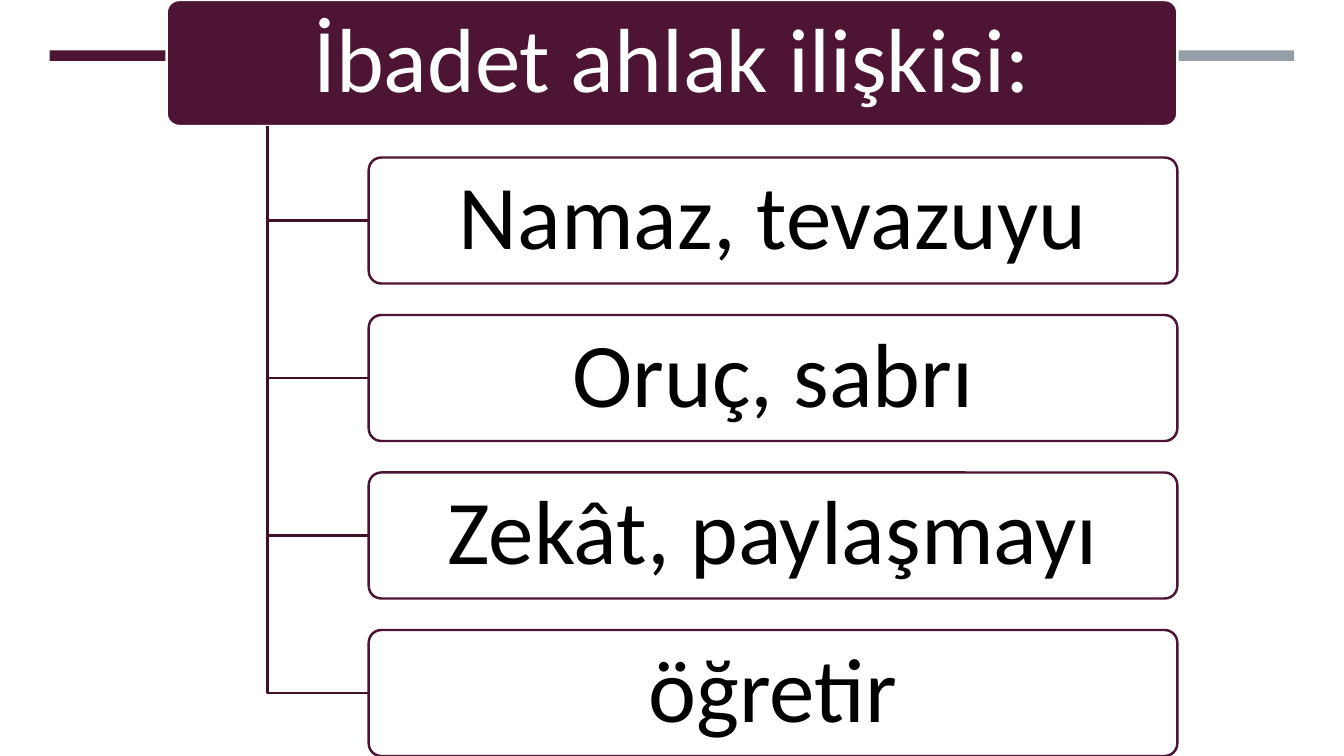
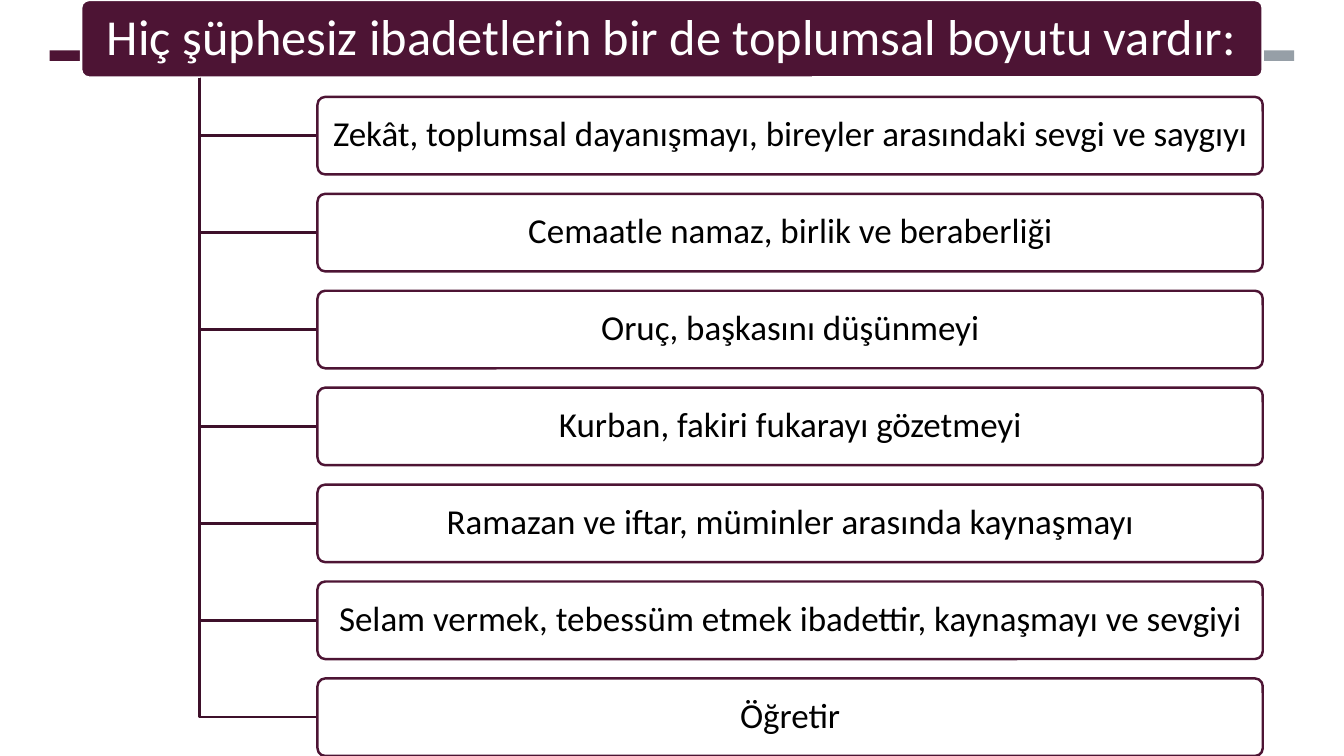
from dataclasses import dataclass
from pptx import Presentation
from pptx.dml.color import RGBColor
from pptx.enum.shapes import MSO_SHAPE
from pptx.enum.text import MSO_ANCHOR, MSO_AUTO_SIZE, PP_ALIGN
from pptx.util import Pt


# Colours, font and sizes
@dataclass(frozen=True)
class Theme:
    plum: RGBColor = RGBColor.from_string("4D1434")
    dark: RGBColor = RGBColor.from_string("3E102A")
    grey: RGBColor = RGBColor.from_string("969FA7")
    white: RGBColor = RGBColor.from_string("FFFFFF")
    black: RGBColor = RGBColor.from_string("000000")
    font: str = "Calibri"
    large: int = 65
    mid: int = 36
    small: int = 25
    line: float = 1.75


WIDE, HIGH = 960, 540
GAP = 0.25     # gap between boxes, as a share of box height
INDENT = 0.1   # trunk indent, as a share of head width


def write(shape, text, size, color, font):
    """Put one centred line of text into a shape."""
    frame = shape.text_frame
    frame.word_wrap = True
    frame.auto_size = MSO_AUTO_SIZE.NONE
    frame.vertical_anchor = MSO_ANCHOR.MIDDLE
    frame.margin_left = frame.margin_right = Pt(5)
    frame.margin_top = frame.margin_bottom = Pt(0)
    par = frame.paragraphs[0]
    par.alignment = PP_ALIGN.CENTER
    par.line_spacing = 0.9
    run = par.add_run()
    run.text = text
    run.font.size = Pt(size)
    run.font.name = font
    run.font.color.rgb = color


class Deck:
    def __init__(self, theme):
        self.theme = theme
        self.file = Presentation()
        self.file.slide_width, self.file.slide_height = Pt(WIDE), Pt(HIGH)
        self.layout = self.file.slide_layouts[5]
        self.slide = None

    def start(self):
        self.slide = self.file.slides.add_slide(self.layout)

    def box(self, kind, place, fill, line=None):
        shape = self.slide.shapes.add_shape(kind, *map(Pt, place))
        shape.shadow.inherit = False
        shape.fill.solid()
        shape.fill.fore_color.rgb = fill
        if line is None:
            shape.line.fill.background()
        else:
            shape.line.color.rgb = line
            shape.line.width = Pt(self.theme.line)
        return shape

    def round(self, place, fill, line):
        shape = self.box(MSO_SHAPE.ROUNDED_RECTANGLE, place, fill, line)
        shape.adjustments[0] = 0.1
        return shape

    def bands(self):
        """Draw the two bands and move them to the shared layout."""
        for left, color in ((35.5, self.theme.plum), (633, self.theme.grey)):
            band = self.box(MSO_SHAPE.RECTANGLE, (left, 36, 291.5, 7.5), color)
            self.layout.shapes._spTree.append(band._element)

    def head(self, text, place, size):
        """Lay the title placeholder over a filled box."""
        self.round(place, self.theme.plum, self.theme.white)
        title = self.slide.shapes.title
        title.left, title.top, title.width, title.height = map(Pt, place)
        write(title, text, size=size, color=self.theme.white,
              font=self.theme.font)
        self.slide.shapes._spTree.append(title._element)

    def elbow(self, left, top, right, low):
        path = self.slide.shapes.build_freeform(Pt(left), Pt(top))
        path.add_line_segments(
            [(Pt(left), Pt(low)), (Pt(right), Pt(low))], close=False)
        shape = path.convert_to_shape()
        shape.shadow.inherit = False
        shape.fill.background()
        shape.line.color.rgb = self.theme.dark
        shape.line.width = Pt(self.theme.line)

    def item(self, text, place, size):
        shape = self.round(place, self.theme.white, self.theme.plum)
        write(shape, text, size=size, color=self.theme.black,
              font=self.theme.font)

    def tree(self, title, items, width, big, size):
        """Fill the slide height with a head and its indented items."""
        count = len(items) + 1
        tall = HIGH / (count + GAP * (count - 1))
        left = (WIDE - width) / 2
        trunk = left + INDENT * width
        edge = trunk + INDENT * width
        self.head(title, (left, 0, width, tall), big)
        for row, text in enumerate(items, 1):
            top = row * tall * (1 + GAP)
            self.elbow(trunk, tall, edge, top + tall / 2)
            self.item(text, (edge, top, left + width - edge, tall), size)


def main():
    theme = Theme()
    deck = Deck(theme)

    # Worship and morals
    deck.start()
    deck.bands()
    deck.tree("İbadet ahlak ilişkisi:",
              ["Namaz, tevazuyu", "Oruç, sabrı", "Zekât, paylaşmayı",
               "öğretir"],
              width=722, big=theme.large, size=theme.large)

    # Worship and society
    deck.start()
    deck.tree("Hiç şüphesiz ibadetlerin bir de toplumsal boyutu vardır:",
              ["Zekât, toplumsal dayanışmayı, bireyler arasındaki sevgi ve "
               "saygıyı",
               "Cemaatle namaz, birlik ve beraberliği",
               "Oruç, başkasını düşünmeyi",
               "Kurban, fakiri fukarayı gözetmeyi",
               "Ramazan ve iftar, müminler arasında kaynaşmayı",
               "Selam vermek, tebessüm etmek ibadettir, kaynaşmayı ve sevgiyi",
               "Öğretir"],
              width=844, big=theme.mid, size=theme.small)

    deck.file.save("out.pptx")


if __name__ == "__main__":
    main()
